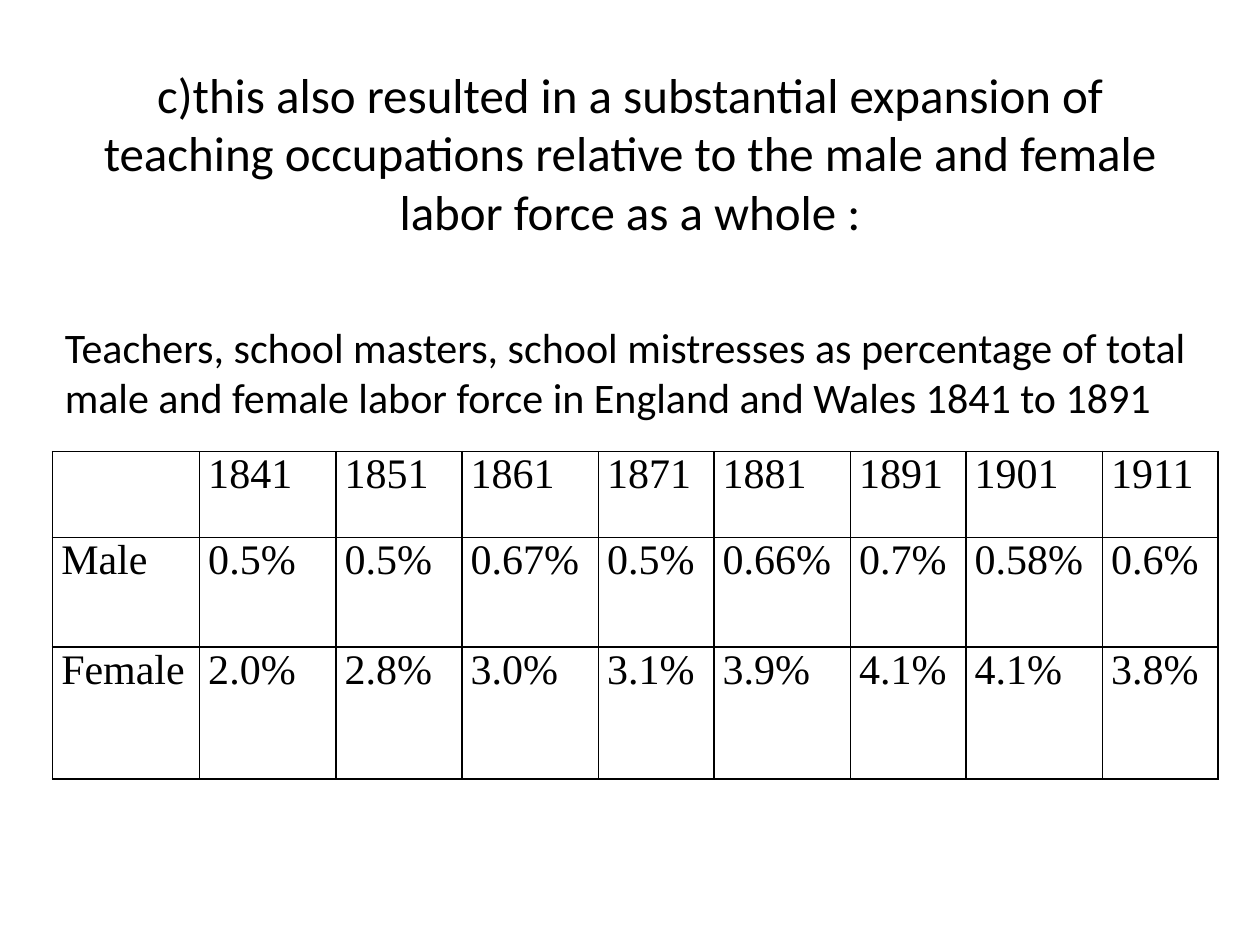
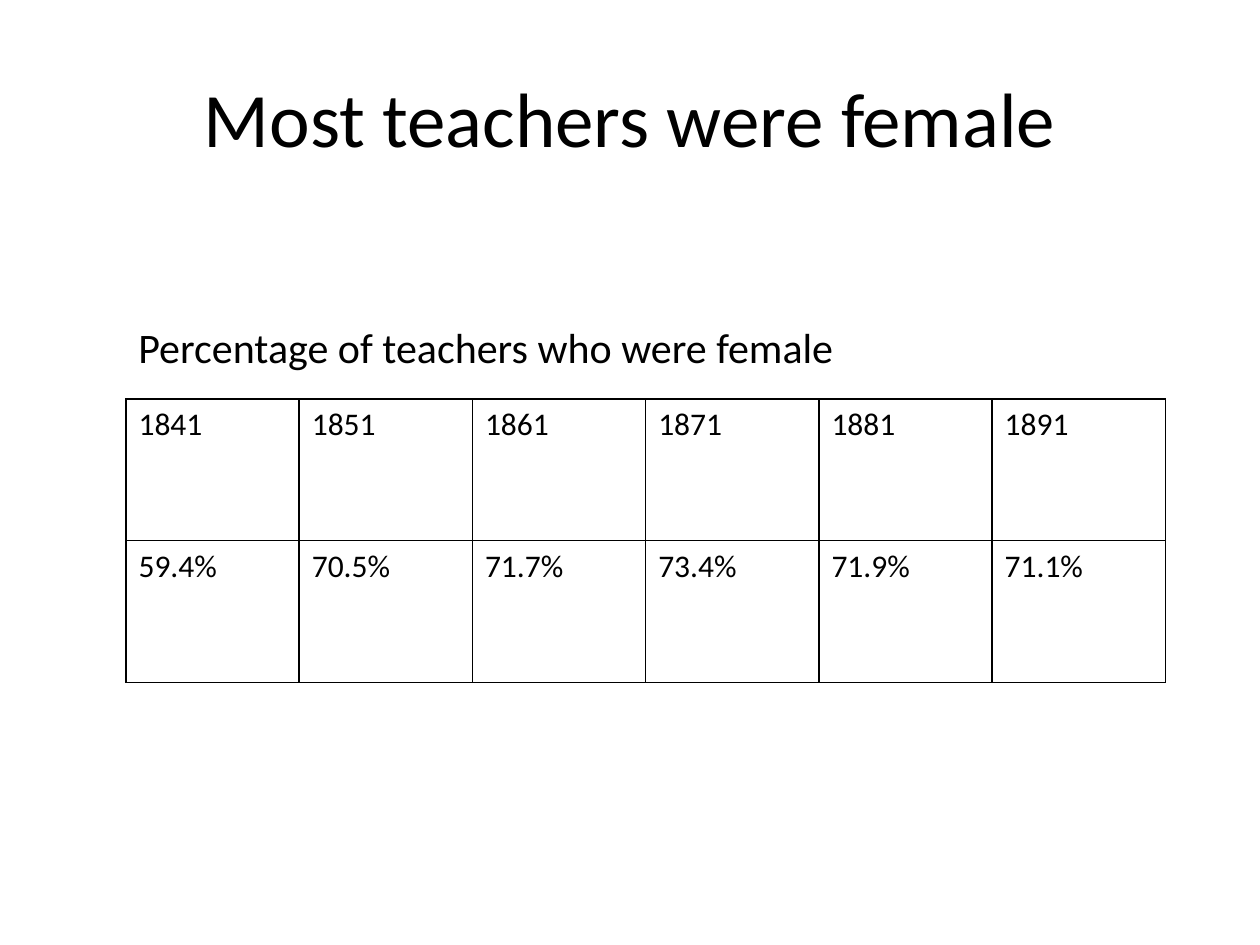
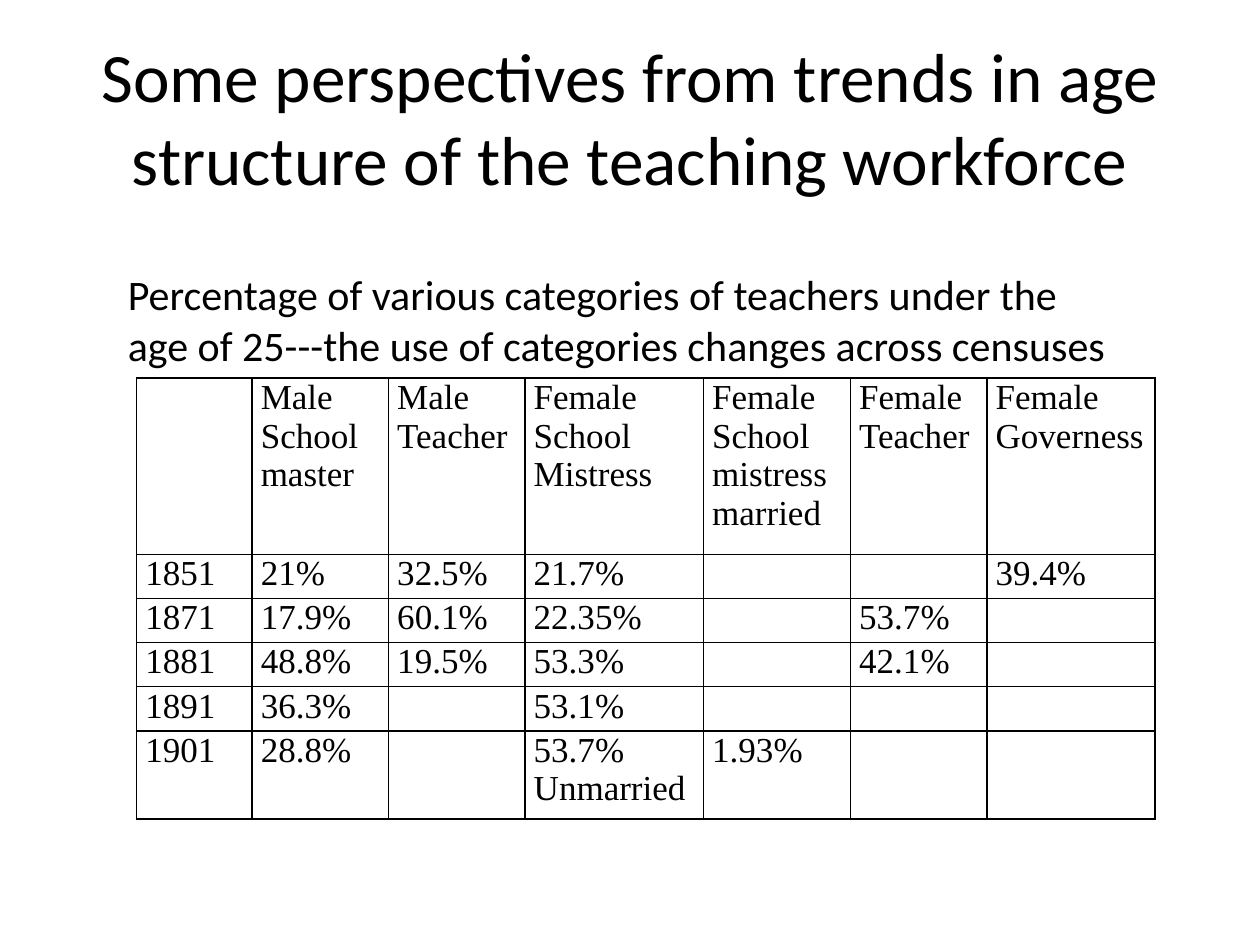
from dataclasses import dataclass

from lxml.etree import SubElement
from pptx import Presentation
from pptx.dml.color import RGBColor
from pptx.enum.text import MSO_ANCHOR as Anchor, PP_ALIGN as Align
from pptx.oxml.ns import qn
from pptx.slide import Slide
from pptx.table import _Cell as Cell
from pptx.text.text import TextFrame
from pptx.util import Emu, Inches, Pt

BLACK = RGBColor(0x00, 0x00, 0x00)
SANS = "Calibri"
SERIF = "Times New Roman"
SLIDE_WIDTH = Inches(10)
SLIDE_HEIGHT = Inches(7.5)
GRID_COLUMNS = 120
UNIT = SLIDE_WIDTH // GRID_COLUMNS
BORDER_WIDTH = Pt(1)
BORDER_TAGS = ("a:lnL", "a:lnR", "a:lnT", "a:lnB")


@dataclass(frozen=True)
class Area:
    column: float
    row: float
    columns: float
    rows: float


@dataclass(frozen=True)
class CensusTable:
    column: float
    row: float
    widths: tuple[float, ...]
    heights: tuple[float, ...]
    cells: tuple[tuple[str, ...], ...]
    font: str = SERIF
    size: float = 24
    side_margin: float = 0.07
    top_margin: float = 0


@dataclass(frozen=True)
class CensusSlide:
    title: str
    title_row: float
    title_size: float
    caption: str
    caption_area: Area
    table: CensusTable


CENSUS_SLIDES = (
    CensusSlide(
        title="c)this also resulted in a substantial expansion of teaching occupations "
        "relative to the male and female labor force as a whole :",
        title_row=7,
        title_size=28,
        caption="Teachers, school masters, school mistresses as percentage of total "
        "male and female labor force in England and Wales 1841 to 1891",
        caption_area=Area(5, 30, 111, 10.9),
        table=CensusTable(
            column=5,
            row=43,
            widths=(14, 13, 12, 13, 11, 13, 11, 13, 11),
            heights=(8.2, 10.4, 12.6),
            cells=(
                ("", "1841", "1851", "1861", "1871", "1881", "1891", "1901", "1911"),
                ("Male", "0.5%", "0.5%", "0.67%", "0.5%", "0.66%", "0.7%", "0.58%", "0.6%"),
                ("Female", "2.0%", "2.8%", "3.0%", "3.1%", "3.9%", "4.1%", "4.1%", "3.8%"),
            ),
        ),
    ),
    CensusSlide(
        title="Most teachers were female",
        title_row=3.6,
        title_size=44,
        caption="Percentage of teachers who were female",
        caption_area=Area(12, 30, 93, 6),
        table=CensusTable(
            column=12,
            row=38,
            widths=(16.5,) * 6,
            heights=(13.5,) * 2,
            cells=(
                ("1841", "1851", "1861", "1871", "1881", "1891"),
                ("59.4%", "70.5%", "71.7%", "73.4%", "71.9%", "71.1%"),
            ),
            font=SANS,
            size=18,
            side_margin=0.1,
            top_margin=0.05,
        ),
    ),
    CensusSlide(
        title="Some perspectives from trends in age structure of the teaching workforce",
        title_row=3.6,
        title_size=39.6,
        caption="Percentage of various categories of teachers under the age of 25"
        "---the use of categories changes across censuses",
        caption_area=Area(11, 25, 97, 10.9),
        table=CensusTable(
            column=13,
            row=36,
            widths=(11, 13, 13, 17, 14, 13, 16),
            heights=(16.8, 4.2, 4.2, 4.2, 4.2, 8.4),
            cells=(
                (
                    "",
                    "Male\nSchool master",
                    "Male\nTeacher",
                    "Female\nSchool\nMistress",
                    "Female School mistress married",
                    "Female Teacher",
                    "Female Governess",
                ),
                ("1851", "21%", "32.5%", "21.7%", "", "", "39.4%"),
                ("1871", "17.9%", "60.1%", "22.35%", "", "53.7%", ""),
                ("1881", "48.8%", "19.5%", "53.3%", "", "42.1%", ""),
                ("1891", "36.3%", "", "53.1%", "", "", ""),
                ("1901", "28.8%", "", "53.7% Unmarried", "1.93%", "", ""),
            ),
            size=20,
        ),
    ),
)


def grid(units: float) -> Emu:
    return Emu(round(units * UNIT))


def write_text(
    frame: TextFrame,
    text: str,
    *,
    size: float,
    font: str = SANS,
    color: RGBColor = BLACK,
    align: Align = Align.LEFT,
) -> None:
    for index, line in enumerate(text.split("\n")):
        para = frame.add_paragraph() if index else frame.paragraphs[0]
        para.alignment = align
        if line:
            span = para.add_run()
            span.text = line
            span.font.name = font
            span.font.size = Pt(size)
            span.font.color.rgb = color


def add_text(
    page: Slide,
    area: Area,
    text: str,
    *,
    size: float,
    align: Align = Align.LEFT,
    anchor: Anchor = Anchor.TOP,
) -> None:
    box = page.shapes.add_textbox(
        grid(area.column), grid(area.row), grid(area.columns), grid(area.rows)
    )
    frame = box.text_frame
    frame.word_wrap = True
    frame.vertical_anchor = anchor
    write_text(frame, text, size=size, align=align)


def draw_borders(cell: Cell) -> None:
    properties = cell._tc.get_or_add_tcPr()
    for tag in BORDER_TAGS:
        line = SubElement(properties, qn(tag), w=str(BORDER_WIDTH))
        fill = SubElement(line, qn("a:solidFill"))
        SubElement(fill, qn("a:srgbClr"), val=str(BLACK))


def add_census_table(page: Slide, census: CensusTable) -> None:
    table = page.shapes.add_table(
        len(census.heights),
        len(census.widths),
        grid(census.column),
        grid(census.row),
        grid(sum(census.widths)),
        grid(sum(census.heights)),
    ).table
    table.first_row = False
    table.horz_banding = False
    for column, width in zip(table.columns, census.widths):
        column.width = grid(width)
    for row, height, texts in zip(table.rows, census.heights, census.cells):
        row.height = grid(height)
        for cell, text in zip(row.cells, texts):
            cell.margin_left = cell.margin_right = Inches(census.side_margin)
            cell.margin_top = cell.margin_bottom = Inches(census.top_margin)
            draw_borders(cell)
            cell.fill.background()
            write_text(cell.text_frame, text, size=census.size, font=census.font)


def main() -> None:
    deck = Presentation()
    deck.slide_width = SLIDE_WIDTH
    deck.slide_height = SLIDE_HEIGHT
    blank = deck.slide_layouts[6]
    for content in CENSUS_SLIDES:
        page = deck.slides.add_slide(blank)
        add_text(
            page,
            Area(6, content.title_row, 108, 15),
            content.title,
            size=content.title_size,
            align=Align.CENTER,
            anchor=Anchor.MIDDLE,
        )
        add_census_table(page, content.table)
        add_text(page, content.caption_area, content.caption, size=24)
    deck.save("out.pptx")


if __name__ == "__main__":
    main()
